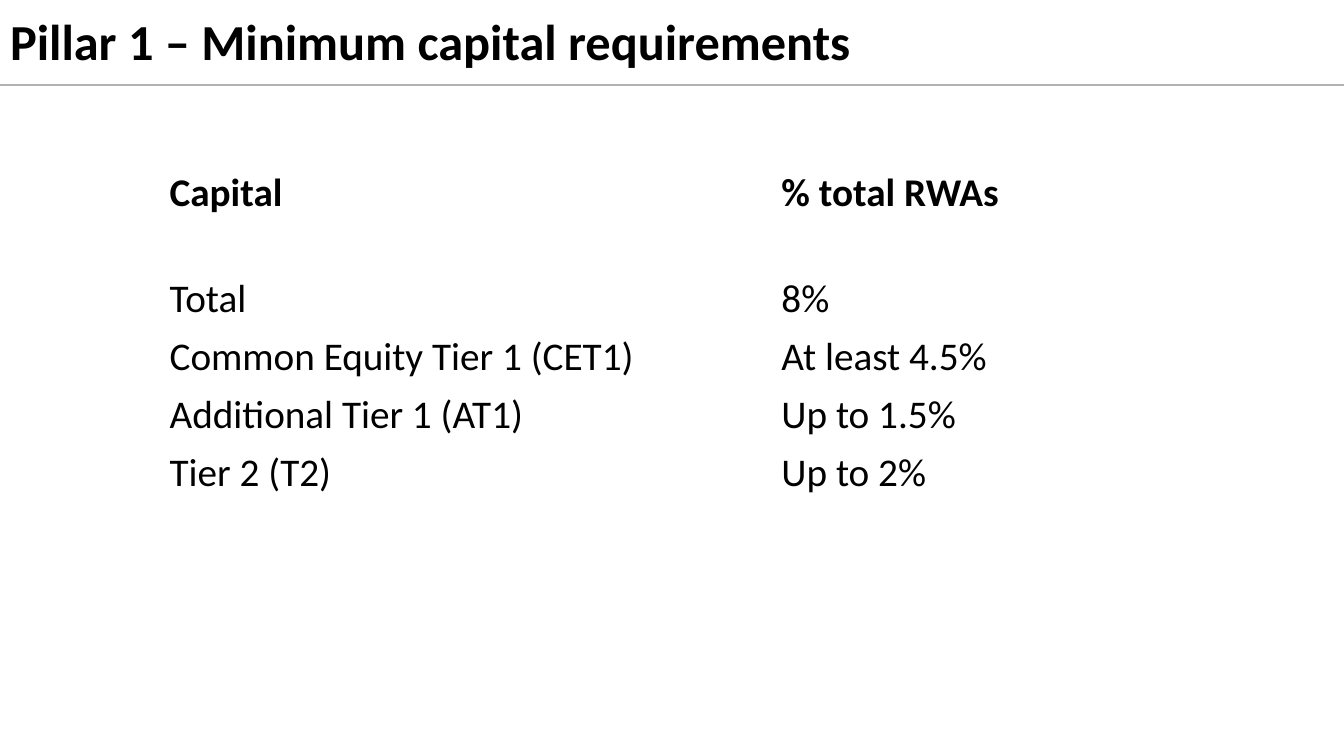
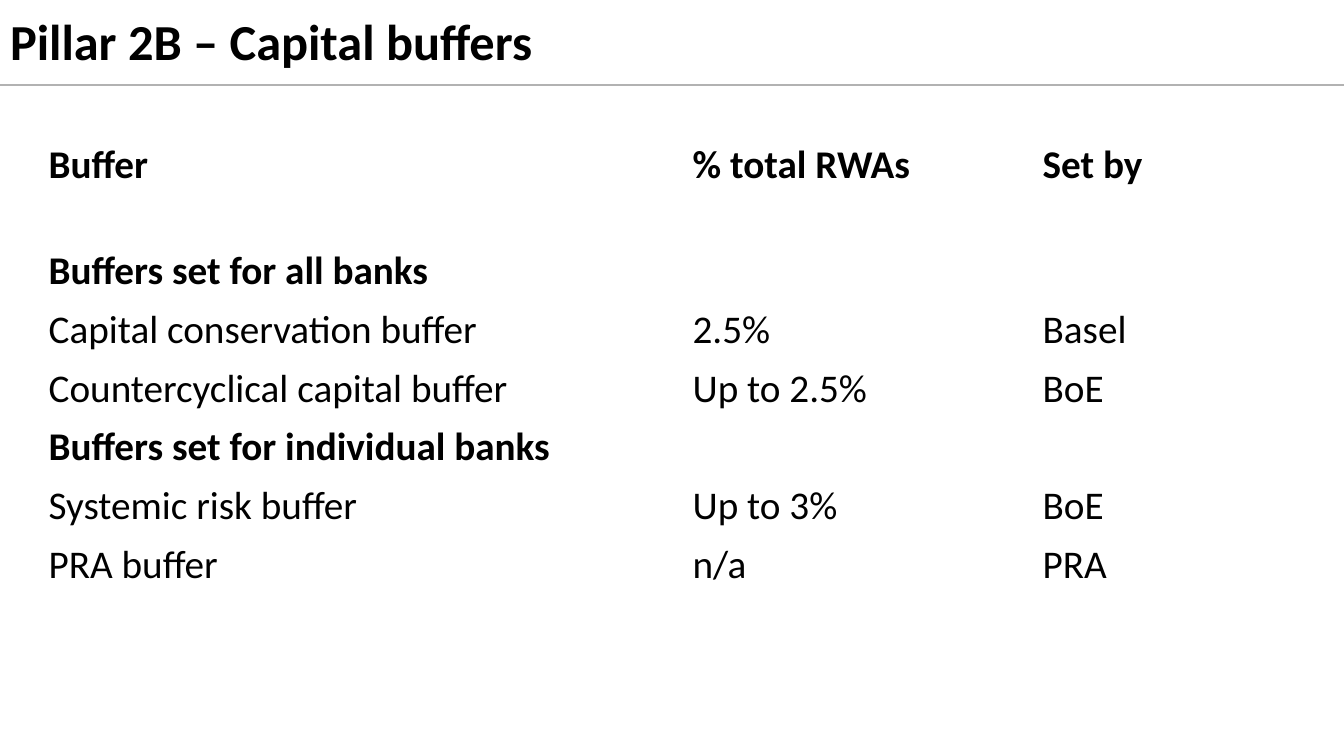
from dataclasses import dataclass

from lxml import etree
from pptx import Presentation
from pptx.dml.color import RGBColor
from pptx.enum.shapes import MSO_CONNECTOR
from pptx.enum.text import MSO_ANCHOR, PP_ALIGN
from pptx.oxml.ns import qn
from pptx.util import Pt

LINE = MSO_CONNECTOR.STRAIGHT
TOP, MID, LOW = MSO_ANCHOR.TOP, MSO_ANCHOR.MIDDLE, MSO_ANCHOR.BOTTOM
LEFT = PP_ALIGN.LEFT


@dataclass(frozen=True)
class Theme:
    """Colours, font and type sizes of the deck."""
    ink: RGBColor = RGBColor(0, 0, 0)
    page: RGBColor = RGBColor(255, 255, 255)
    rule: RGBColor = RGBColor(0xB2, 0xB2, 0xB2)
    face: str = "Calibri"
    head: int = 36
    body: int = 28


THEME = Theme()
WIDE, HIGH = 960, 540
HEAD = (0, 0, WIDE, 63.4)
RULE_Y = 60.5

PILLAR = [
    ("Capital", "% total RWAs"),
    ("Total", "8%"),
    ("Common Equity Tier 1 (CET1)", "At least 4.5%"),
    ("Additional Tier 1 (AT1)", "Up to 1.5%"),
    ("Tier 2 (T2)", "Up to 2%"),
    (),
    (),
]
BUFFER = [
    ("Buffer", "% total RWAs", "Set by"),
    ("Buffers set for all banks",),
    ("Capital conservation buffer", "2.5%", "Basel"),
    ("Countercyclical capital buffer", "Up to 2.5%", "BoE"),
    ("Buffers set for individual banks",),
    ("Systemic risk buffer", "Up to 3%", "BoE"),
    ("PRA buffer", "n/a", "PRA"),
]
SLIDES = [
    ("Pillar 1 – Minimum capital requirements", PILLAR,
     dict(spot=(114, 117.4), cols=(437, 339),
          rows=[75.6] + [41.4] * 6, anchor=TOP)),
    ("Pillar 2B – Capital buffers", BUFFER,
     dict(spot=(27.6, 63.4), cols=(460, 250, 168),
          rows=[75.5] * 2 + [42] * 5, anchor=LOW)),
]


def style(para, size, bold):
    """Apply the theme's type to a paragraph."""
    form = dict(name=THEME.face, size=Pt(size), bold=bold)
    for key, value in form.items():
        setattr(para.font, key, value)
    para.font.color.rgb = THEME.ink


def add_rule(slide, box):
    """Draw the grey line under the title."""
    left, top, width, _ = box
    y = Pt(top + RULE_Y)
    rule = slide.shapes.add_connector(LINE, Pt(left), y, Pt(left + width), y)
    rule.line.color.rgb = THEME.rule
    rule.line.width = Pt(1.5)
    etree.SubElement(rule.element.spPr, qn("a:effectLst"))


def set_title(slide, text, box):
    """Place and format the title in its box."""
    title = slide.shapes.title
    for key, value in zip(("left", "top", "width", "height"), box):
        setattr(title, key, Pt(value))
    frame = title.text_frame
    frame.text = text
    frame.vertical_anchor = MID
    para = frame.paragraphs[0]
    para.alignment = LEFT
    para.line_spacing = 0.9
    style(para, THEME.head, True)


def add_grid(slide, data, spot, cols, rows, anchor):
    """Draw a plain table, with its header and section rows bold."""
    left, top = spot
    grid = slide.shapes.add_table(len(rows), len(cols), Pt(left), Pt(top),
                                  Pt(sum(cols)), Pt(sum(rows))).table
    grid.first_row = grid.horz_banding = False
    for col, width in zip(grid.columns, cols):
        col.width = Pt(width)
    for i, (row, height, texts) in enumerate(zip(grid.rows, rows, data)):
        row.height = Pt(height)
        for cell in row.cells:
            cell.fill.solid()
            cell.fill.fore_color.rgb = THEME.page
            cell.vertical_anchor = anchor
        for cell, text in zip(row.cells, texts):
            cell.text = text
            style(cell.text_frame.paragraphs[0], THEME.body,
                  i == 0 or len(texts) == 1)


def main():
    """Build and save the deck."""
    deck = Presentation()
    deck.slide_width, deck.slide_height = Pt(WIDE), Pt(HIGH)
    for title, data, form in SLIDES:
        slide = deck.slides.add_slide(deck.slide_layouts[5])
        add_rule(slide, HEAD)
        set_title(slide, title, HEAD)
        add_grid(slide, data, **form)
    deck.save("out.pptx")


if __name__ == "__main__":
    main()
